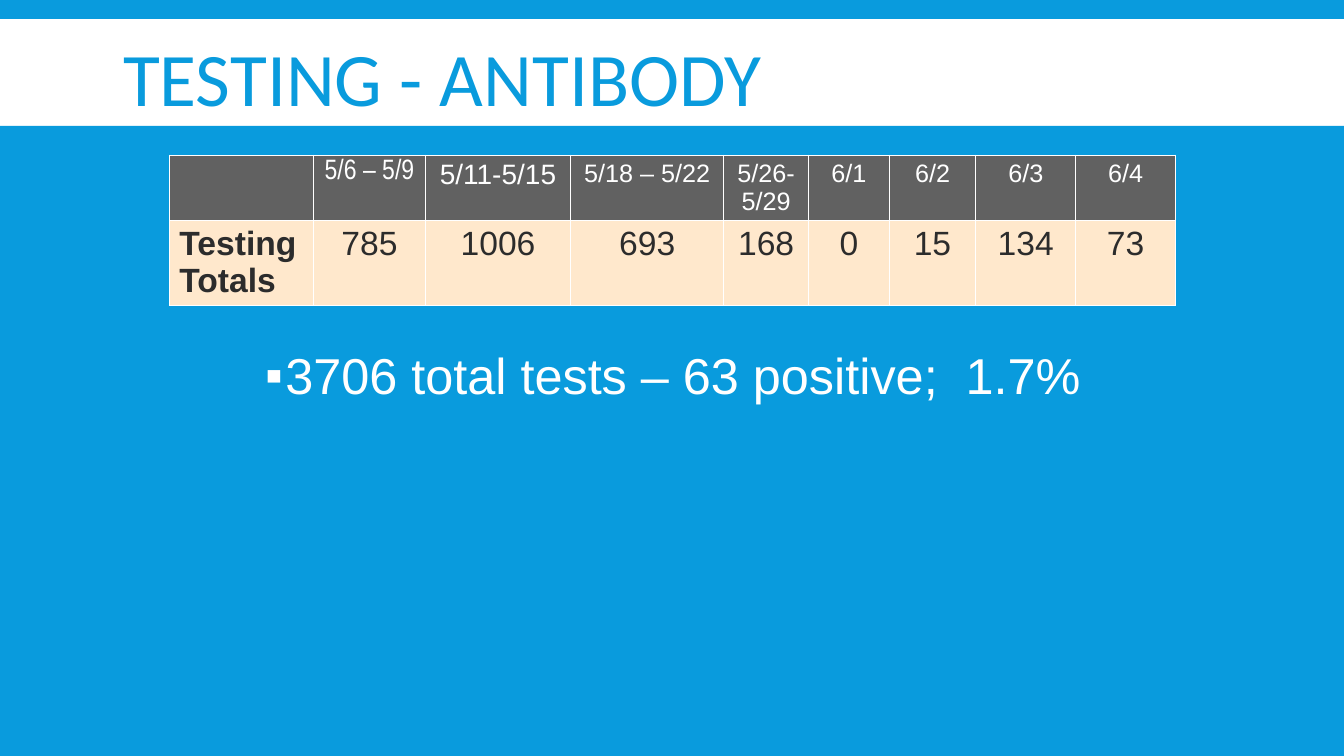
from lxml import etree
from pptx import Presentation
from pptx.dml.color import RGBColor
from pptx.enum import shapes, text
from pptx.oxml import ns
from pptx.util import Inches, Pt

BLUE = RGBColor(0x09, 0x9B, 0xDD)
WHITE = RGBColor(0xFF, 0xFF, 0xFF)
GRAY = RGBColor(0x61, 0x61, 0x61)
CREAM = RGBColor(0xFF, 0xE8, 0xCC)
DARK = RGBColor(0x2C, 0x2C, 0x2C)

SLIDE_WIDTH = 13.33
COLUMN_WIDTHS = (1.43, 1.11, 1.44, 1.52, 0.84, 0.8, 0.86, 0.99, 0.99)
ROW_HEIGHTS = (0.65, 0.84)
PERIODS = ("", "5/6 – 5/9", "5/11-5/15", "5/18 – 5/22", "5/26-5/29",
           "6/1", "6/2", "6/3", "6/4")
TOTALS = ("Testing Totals", "785", "1006", "693", "168", "0", "15", "134", "73")
HEADER_FONTS = {1: ("Arial Narrow", 20), 2: ("Arial", 20)}


def place(shape, left, top, width, height):
    """Move and size a shape, in inches."""
    shape.left, shape.top = Inches(left), Inches(top)
    shape.width, shape.height = Inches(width), Inches(height)


def style_font(paragraph, name, size, color, bold=False):
    """Format every run of a paragraph."""
    for run in paragraph.runs:
        run.font.name = name
        run.font.size = Pt(size)
        run.font.bold = bold
        run.font.color.rgb = color


def add_bands(slide):
    """Lay the white title band and the blue band behind the placeholders."""
    bands = ((0.19, 1.8, WHITE), (1.25, 0.8, BLUE))
    for index, (top, height, color) in enumerate(bands):
        band = slide.shapes.add_shape(
            shapes.MSO_SHAPE.RECTANGLE, 0, Inches(top), Inches(SLIDE_WIDTH), Inches(height))
        band.shadow.inherit = False
        band.fill.solid()
        band.fill.fore_color.rgb = color
        band.line.fill.background()
        slide.shapes._spTree.insert(2 + index, band._element)


def fill_title(title, left, top, width, height):
    """Write the slide title in the given box."""
    place(title, left, top, width, height)
    frame = title.text_frame
    frame.text = "TESTING - ANTIBODY"
    frame.auto_size = text.MSO_AUTO_SIZE.NONE
    frame.vertical_anchor = text.MSO_ANCHOR.MIDDLE
    paragraph = frame.paragraphs[0]
    paragraph.alignment = text.PP_ALIGN.LEFT
    paragraph.line_spacing = 0.85
    style_font(paragraph, "Calibri", 54, BLUE)


def add_borders(cell):
    """Draw thin white lines on all sides of a cell."""
    properties = cell._tc.get_or_add_tcPr()
    for side in ("a:lnL", "a:lnR", "a:lnT", "a:lnB"):
        line = etree.SubElement(properties, ns.qn(side), w=str(Pt(1)))
        fill = etree.SubElement(line, ns.qn("a:solidFill"))
        etree.SubElement(fill, ns.qn("a:srgbClr"), val=str(WHITE))


def fill_cell(cell, value, fill, name, size, color, is_label):
    """Write and format one table cell."""
    add_borders(cell)
    cell.fill.solid()
    cell.fill.fore_color.rgb = fill
    cell.margin_top = cell.margin_bottom = Inches(0.04)
    if value:
        cell.text_frame.text = value
        paragraph = cell.text_frame.paragraphs[0]
        paragraph.alignment = text.PP_ALIGN.LEFT if is_label else text.PP_ALIGN.CENTER
        style_font(paragraph, name, size, color, is_label)


def add_totals_table(slide, left, top):
    """Add the table of tests by period."""
    table = slide.shapes.add_table(
        len(ROW_HEIGHTS), len(COLUMN_WIDTHS), Inches(left), Inches(top),
        Inches(sum(COLUMN_WIDTHS)), Inches(sum(ROW_HEIGHTS))).table
    for row, height in zip(table.rows, ROW_HEIGHTS):
        row.height = Inches(height)
    for index, width in enumerate(COLUMN_WIDTHS):
        table.columns[index].width = Inches(width)
        name, size = HEADER_FONTS.get(index, ("Arial", 18))
        is_label = index == 0
        fill_cell(table.cell(0, index), PERIODS[index], GRAY, name, size, WHITE, is_label)
        fill_cell(table.cell(1, index), TOTALS[index], CREAM, "Arial", 24, DARK, is_label)


def fill_summary(body, left, top, width, height):
    """Write the bulleted summary in the given box."""
    place(body, left, top, width, height)
    frame = body.text_frame
    frame.text = "3706 total tests – 63 positive;  1.7%"
    frame.auto_size = text.MSO_AUTO_SIZE.NONE
    frame.vertical_anchor = text.MSO_ANCHOR.TOP
    paragraph = frame.paragraphs[0]
    paragraph.level = 2
    paragraph.line_spacing = 0.9
    paragraph.space_before = Pt(0)
    paragraph.space_after = Pt(4)
    properties = paragraph._p.get_or_add_pPr()
    properties.set("marL", str(Inches(0.7)))
    properties.set("indent", str(Inches(-0.2)))
    bullet_color = etree.SubElement(properties, ns.qn("a:buClr"))
    etree.SubElement(bullet_color, ns.qn("a:srgbClr"), val=str(WHITE))
    etree.SubElement(properties, ns.qn("a:buFont"), typeface="Arial")
    etree.SubElement(properties, ns.qn("a:buChar"), char="▪")
    style_font(paragraph, "Arial", 36, WHITE)


def main():
    """Build and save the presentation."""
    presentation = Presentation()
    presentation.slide_width = Inches(SLIDE_WIDTH)
    presentation.slide_height = Inches(7.5)
    slide = presentation.slides.add_slide(presentation.slide_layouts[1])
    slide.background.fill.solid()
    slide.background.fill.fore_color.rgb = BLUE
    add_bands(slide)
    fill_title(slide.shapes.title, 1.12, 0, 10.7, 1.65)
    add_totals_table(slide, 1.68, 1.54)
    fill_summary(slide.placeholders[1], 2.03, 3.43, 9.58, 1.23)
    presentation.save("out.pptx")


if __name__ == "__main__":
    main()
